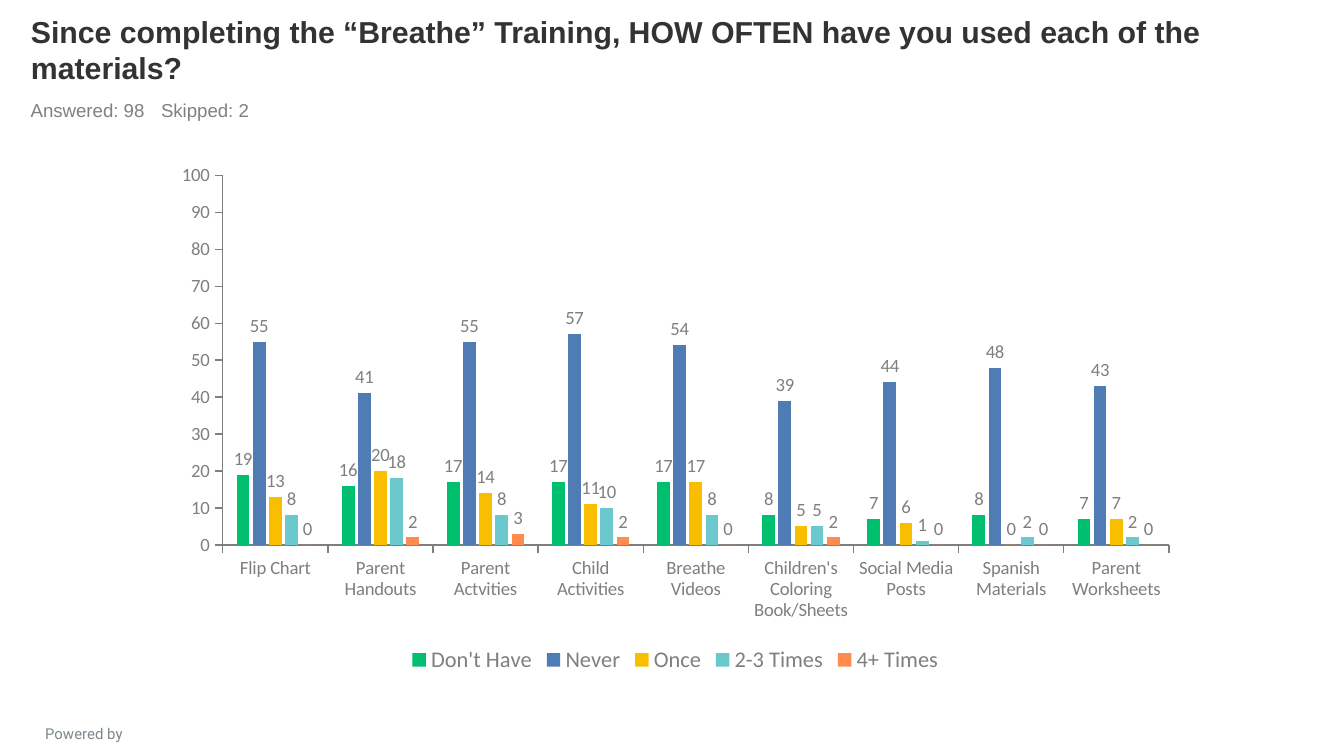
from lxml import etree
from pptx import Presentation
from pptx.chart.data import CategoryChartData
from pptx.dml.color import RGBColor
from pptx.enum.chart import XL_CHART_TYPE as ChartType
from pptx.enum.chart import XL_LABEL_POSITION as LabelPosition
from pptx.enum.chart import XL_LEGEND_POSITION as LegendPosition
from pptx.enum.chart import XL_TICK_LABEL_POSITION as TickLabels
from pptx.enum.chart import XL_TICK_MARK as TickMark
from pptx.enum.text import MSO_ANCHOR, MSO_AUTO_SIZE, PP_ALIGN
from pptx.oxml.ns import qn
from pptx.util import Inches, Pt

GREY = "7F7F7F"


def set_font(font, name, size, color, bold=False):
    font.name, font.size, font.bold = name, Pt(size), bold
    font.color.rgb = RGBColor.from_string(color)


def write_text(box, text, name, size, color, bold=False,
               align=PP_ALIGN.LEFT, anchor=MSO_ANCHOR.TOP):
    frame = box.text_frame
    frame.word_wrap = True
    frame.auto_size = MSO_AUTO_SIZE.NONE
    frame.vertical_anchor = anchor
    paragraph = frame.paragraphs[0]
    paragraph.alignment = align
    run = paragraph.add_run()
    run.text = text
    set_font(run.font, name, size, color, bold)
    return paragraph


prs = Presentation()
prs.slide_width = Inches(10)
prs.slide_height = Inches(10) * 9 // 16
slide = prs.slides.add_slide(prs.slide_layouts[5])

# Heading
title = slide.shapes.title
title.left, title.top = Inches(0.13), Inches(0.09)
title.width, title.height = Inches(9), Inches(0.6)
write_text(title, "Since completing the “Breathe” Training, HOW OFTEN have you "
           "used each of the materials?", "Arial", 16.2, "333333", bold=True,
           anchor=MSO_ANCHOR.BOTTOM)

response_count = slide.shapes.add_textbox(
    Inches(0.13), Inches(0.69), Inches(9), Inches(0.26))
counts = write_text(response_count, "Answered: 98\tSkipped: 2",
                    "Arial", 10, "808080")
tabs = etree.SubElement(counts._p.get_or_add_pPr(), qn("a:tabLst"))
etree.SubElement(tabs, qn("a:tab"), pos=str(Inches(0.97)), algn="l")

# Usage chart
materials = ["Flip Chart", "Parent Handouts", "Parent Actvities",
             "Child Activities", "Breathe Videos",
             "Children's Coloring Book/Sheets", "Social Media Posts",
             "Spanish Materials", "Parent Worksheets"]
frequencies = [
    ("Don't Have", "00BF6F", [19, 16, 17, 17, 17, 8, 7, 8, 7]),
    ("Never", "507CB6", [55, 41, 55, 57, 54, 39, 44, 48, 43]),
    ("Once", "F9BE00", [13, 20, 14, 11, 17, 5, 6, 0, 7]),
    ("2-3 Times", "6BC8CD", [8, 18, 8, 10, 8, 5, 1, 2, 2]),
    ("4+ Times", "FF8B4F", [0, 2, 3, 2, 0, 2, 0, 0, 0]),
]
usage = CategoryChartData(number_format="0")
usage.categories = materials
for frequency, color, answers in frequencies:
    usage.add_series(frequency, answers)

chart = slide.shapes.add_chart(
    ChartType.COLUMN_CLUSTERED, Inches(1.2), Inches(1.15),
    Inches(7.65), Inches(3.9), usage).chart
set_font(chart.font, "Calibri", 18, "333333")
chart.has_title = False
chart.has_legend = True
chart.legend.position = LegendPosition.BOTTOM
chart.legend.include_in_layout = False
set_font(chart.legend.font, "Calibri", 12, GREY)

plot = chart.plots[0]
plot.gap_width, plot.overlap = 219, -27
plot.vary_by_categories = False
for series, (frequency, color, answers) in zip(plot.series, frequencies):
    series.format.fill.solid()
    series.format.fill.fore_color.rgb = RGBColor.from_string(color)
    labels = series.data_labels
    labels.show_value = True
    labels.number_format, labels.number_format_is_linked = "0", False
    labels.position = LabelPosition.OUTSIDE_END
    set_font(labels.font, "Calibri", 10, GREY)

for axis in (chart.category_axis, chart.value_axis):
    axis.has_major_gridlines = False
    axis.major_tick_mark = TickMark.OUTSIDE
    axis.minor_tick_mark = TickMark.NONE
    axis.format.line.width = Pt(0.75)
    axis.format.line.color.rgb = RGBColor.from_string(GREY)
    set_font(axis.tick_labels.font, "Calibri", 10, GREY)
chart.category_axis.tick_label_position = TickLabels.LOW
chart.value_axis.minimum_scale = 0
chart.value_axis.maximum_scale = 100
chart.value_axis.major_unit = 10

# Footer
footer = slide.shapes.add_textbox(
    Inches(0.05), Inches(5.34), Inches(1.15), Inches(0.18))
write_text(footer, "Powered by", "Roboto", 8, "7C878E", align=PP_ALIGN.CENTER)

prs.save("out.pptx")
